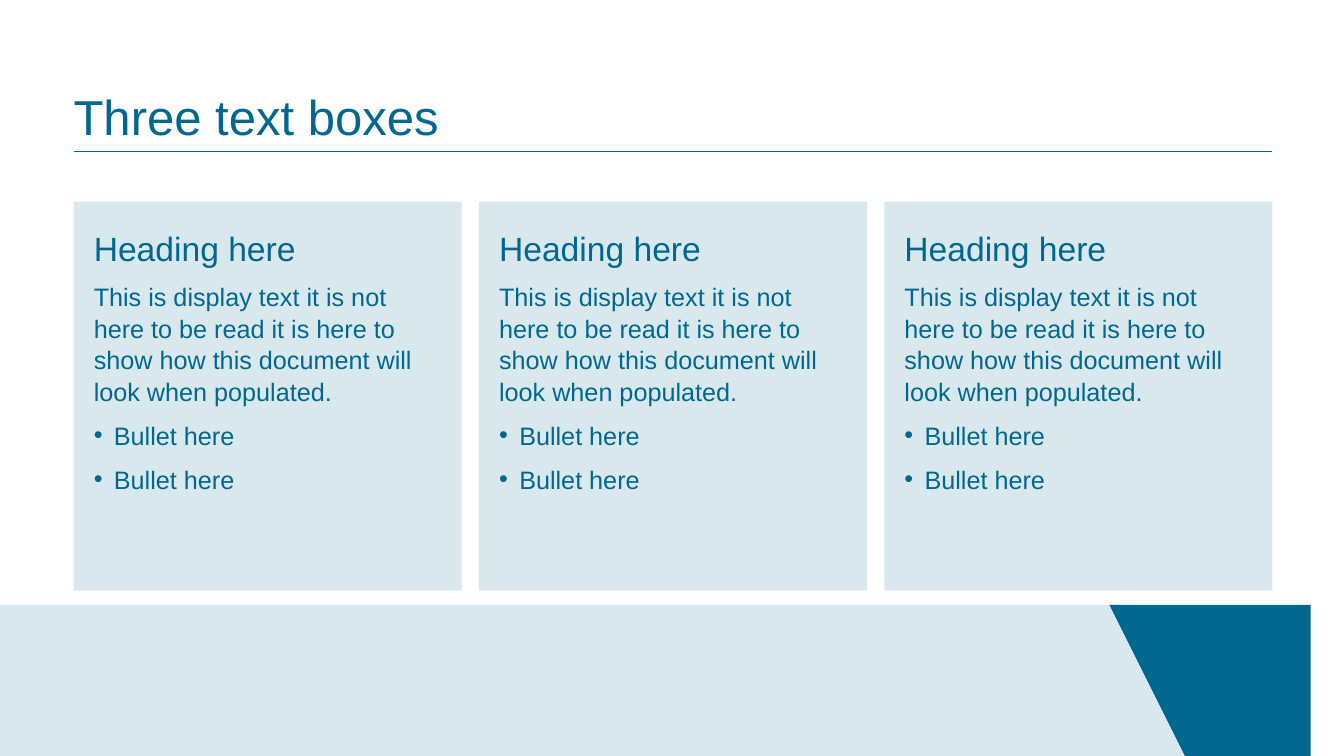
from lxml import etree
from pptx import Presentation
from pptx import util as u
from pptx.dml.color import RGBColor
from pptx.enum import shapes, text
from pptx.oxml.ns import qn

COLORS = {"blue": "006890", "pale": "D9E8ED"}
FONT = "Arial"
SLIDE_W, SLIDE_H = 13.33, 7.5
LEFT, CONTENT_W = 0.73, 11.89
CARD_COUNT, CARD_GAP = 3, 0.17
BODY = ("This is display text it is not here to be read it is here to "
        "show how this document will look when populated.")


def rgb(name):
    return RGBColor.from_string(COLORS[name])


def place(sp, x, y, w, h):
    sp.left, sp.top = u.Inches(x), u.Inches(y)
    sp.width, sp.height = u.Inches(w), u.Inches(h)


def set_frame(sp, anchor, insets=(0, 0, 0, 0)):
    tf = sp.text_frame
    tf.word_wrap = True
    tf.auto_size = text.MSO_AUTO_SIZE.NONE
    tf.vertical_anchor = anchor
    (tf.margin_left, tf.margin_top,
     tf.margin_right, tf.margin_bottom) = map(u.Inches, insets)
    return tf


def add_text(tf, words, size=18, level=0, before=9, spacing=1.04, bullet=False):
    """Fill the first empty paragraph, or append a new one."""
    p = tf.paragraphs[0]
    if p.runs:
        p = tf.add_paragraph()
    p.level = level
    p.alignment = text.PP_ALIGN.LEFT
    p.space_before, p.space_after = u.Pt(before), u.Pt(0)
    p.line_spacing = spacing
    pPr = p._p.get_or_add_pPr()
    indent = u.Inches(0.2) if bullet else 0
    pPr.set("marL", str(indent))
    pPr.set("indent", str(-indent))
    if bullet:
        etree.SubElement(pPr, qn("a:buFont"), typeface=FONT)
        etree.SubElement(pPr, qn("a:buChar"), char="•")
    else:
        etree.SubElement(pPr, qn("a:buNone"))
    r = p.add_run()
    r.text = words
    r.font.name, r.font.size, r.font.bold = FONT, u.Pt(size), False
    r.font.color.rgb = rgb("blue")


def add_polygon(s, points, color):
    builder = s.shapes.build_freeform(*points[0], scale=u.Inches(1))
    builder.add_line_segments(points[1:], close=True)
    sp = builder.convert_to_shape()
    sp.shadow.inherit = False
    sp.fill.solid()
    sp.fill.fore_color.rgb = rgb(color)
    sp.line.fill.background()


def add_footer_band(s, x, y, w, h):
    right, bottom = x + w, y + h
    add_polygon(s, [(right - 1.96, y), (right, y), (right, bottom),
                    (right - 1.07, bottom)], "blue")
    add_polygon(s, [(x, y), (right - 2.07, y), (right - 1.18, bottom),
                    (x, bottom)], "pale")


def add_title(s, x, y, w, h):
    title = s.shapes.title
    place(title, x, y, w, h)
    tf = set_frame(title, text.MSO_ANCHOR.BOTTOM)
    add_text(tf, "Three text boxes", size=35, before=0, spacing=0.9)
    rule_y = u.Inches(y + h + 0.05)
    rule = s.shapes.add_connector(shapes.MSO_CONNECTOR.STRAIGHT, u.Inches(x),
                                  rule_y, u.Inches(x + w), rule_y)
    rule.line.color.rgb = rgb("blue")
    rule.line.width = u.Pt(0.75)
    etree.SubElement(rule._element.spPr, qn("a:effectLst"))


def fill_card(sp, x, y, w, h):
    place(sp, x, y, w, h)
    sp.fill.solid()
    sp.fill.fore_color.rgb = rgb("pale")
    tf = set_frame(sp, text.MSO_ANCHOR.TOP, (0.2, 0.24, 0.2, 0))
    add_text(tf, "Heading here", size=24, before=0)
    add_text(tf, BODY, level=1)
    for _ in range(2):
        add_text(tf, "Bullet here", level=2, bullet=True)


def add_cards(s, x, y, w, h):
    card_w = (w - CARD_GAP * (CARD_COUNT - 1)) / CARD_COUNT
    bodies = list(s.placeholders)[1:]
    for i, sp in enumerate(bodies[:CARD_COUNT]):
        fill_card(sp, x + i * (card_w + CARD_GAP), y, card_w, h)
    for sp in bodies[CARD_COUNT:]:
        sp._element.getparent().remove(sp._element)


def main():
    prs = Presentation()
    prs.slide_width, prs.slide_height = u.Inches(SLIDE_W), u.Inches(SLIDE_H)
    s = prs.slides.add_slide(prs.slide_layouts.get_by_name("Comparison"))
    add_footer_band(s, 0, 6.25, SLIDE_W, 1.25)
    add_title(s, LEFT, 0.23, CONTENT_W, 1.22)
    add_cards(s, LEFT, 2, CONTENT_W, 3.86)
    prs.save("out.pptx")


if __name__ == "__main__":
    main()
